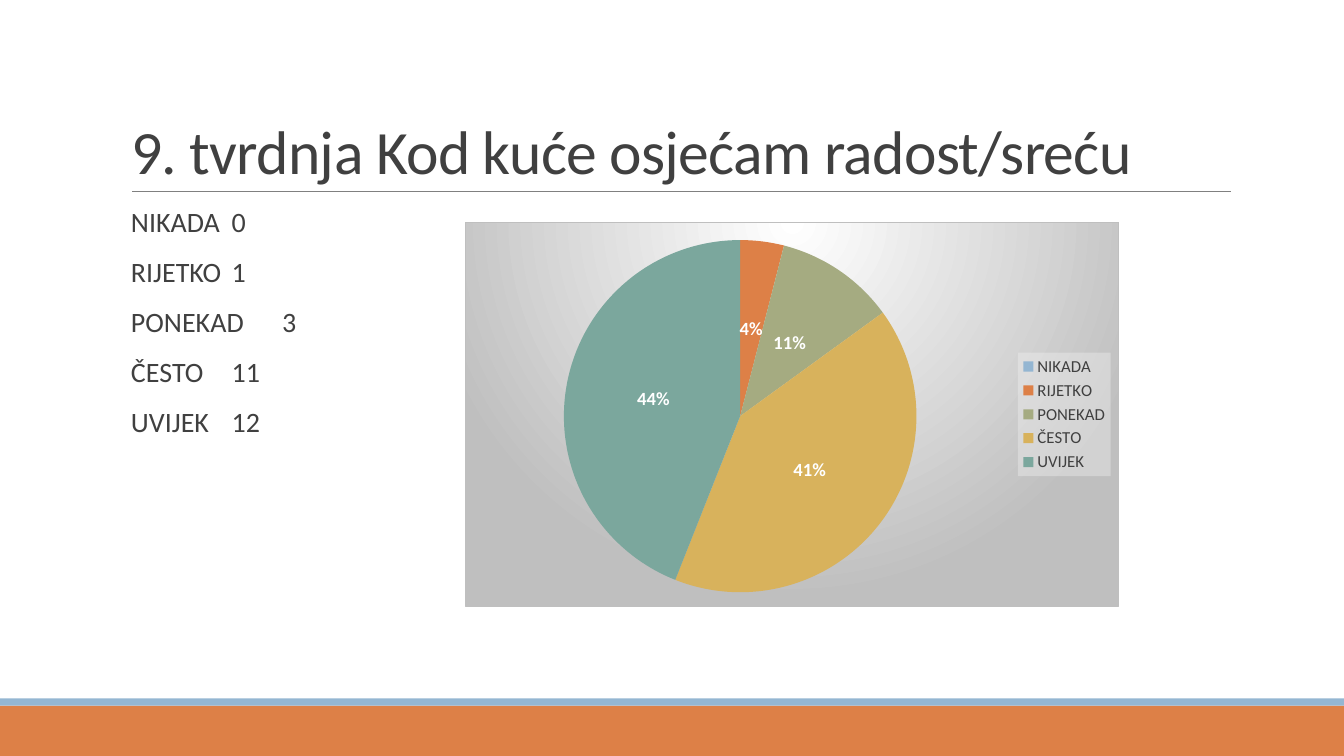
from lxml.etree import SubElement
from pptx import Presentation
from pptx.chart.data import CategoryChartData
from pptx.dml.color import RGBColor
from pptx.enum.chart import XL_CHART_TYPE, XL_LABEL_POSITION, XL_LEGEND_POSITION
from pptx.enum.shapes import MSO_CONNECTOR, MSO_SHAPE
from pptx.enum.text import MSO_ANCHOR, MSO_AUTO_SIZE, PP_ALIGN
from pptx.oxml import parse_xml
from pptx.oxml.ns import nsdecls, qn
from pptx.util import Cm, Pt

BLUE = RGBColor(0x94, 0xB6, 0xD2)
ORANGE = RGBColor(0xDD, 0x80, 0x47)
OLIVE = RGBColor(0xA5, 0xAB, 0x81)
GOLD = RGBColor(0xD8, 0xB2, 0x5C)
TEAL = RGBColor(0x7B, 0xA7, 0x9D)
DARK = RGBColor(0x40, 0x40, 0x40)
GRAY = RGBColor(0x80, 0x80, 0x80)
SILVER = RGBColor(0xBF, 0xBF, 0xBF)
PALE = RGBColor(0xF2, 0xF2, 0xF2)
WHITE = RGBColor(0xFF, 0xFF, 0xFF)

FONT = "Calibri"
WIDTH, HEIGHT = Cm(33.87), Cm(19.05)
ANSWERS = [
    ("NIKADA", 0, 0, BLUE),
    ("RIJETKO", 1, 4, ORANGE),
    ("PONEKAD", 3, 11, OLIVE),
    ("ČESTO", 11, 41, GOLD),
    ("UVIJEK", 12, 44, TEAL),
]


def style_font(font, size, color, bold=False):
    font.name = FONT
    font.size = Pt(size)
    font.bold = bold
    font.color.rgb = color


def place(box, left, top, width, height, anchor):
    box.left, box.top = Cm(left), Cm(top)
    box.width, box.height = Cm(width), Cm(height)
    frame = box.text_frame
    frame.auto_size = MSO_AUTO_SIZE.NONE
    frame.word_wrap = True
    frame.vertical_anchor = anchor
    return frame


def add_band(page, top, height, color):
    band = page.shapes.add_shape(MSO_SHAPE.RECTANGLE, 0, Cm(top), WIDTH, Cm(height))
    band.shadow.inherit = False
    band.fill.solid()
    band.fill.fore_color.rgb = color
    band.line.fill.background()


def add_rule(page, left, right, top):
    rule = page.shapes.add_connector(
        MSO_CONNECTOR.STRAIGHT, Cm(left), Cm(top), Cm(right), Cm(top))
    rule.line.color.rgb = GRAY
    rule.line.width = Pt(0.5)
    SubElement(rule._element.spPr, qn("a:effectLst"))


def fill_title(box, text):
    frame = place(box, 3.05, 0.79, 27.94, 4.04, MSO_ANCHOR.BOTTOM)
    para = frame.paragraphs[0]
    para.alignment = PP_ALIGN.LEFT
    para.line_spacing = 0.85
    span = para.add_run()
    span.text = text
    style_font(span.font, 44, DARK)
    span._r.get_or_add_rPr().set("spc", "-50")


def set_tab_layout(para, position):
    properties = para._p.get_or_add_pPr()
    properties.set("marL", "0")
    properties.set("indent", "0")
    SubElement(properties, qn("a:buNone"))
    tabs = SubElement(properties, qn("a:tabLst"))
    SubElement(tabs, qn("a:tab"), pos=str(position), algn="r")


def fill_answers(box):
    frame = place(box, 3.05, 5.13, 27.94, 11.18, MSO_ANCHOR.TOP)
    frame.margin_left = Cm(0.25)
    for index, (answer, count, share, color) in enumerate(ANSWERS):
        para = frame.add_paragraph() if index else frame.paragraphs[0]
        para.line_spacing = 0.9
        para.space_before = Pt(12)
        para.space_after = Pt(2)
        set_tab_layout(para, Cm(4))
        span = para.add_run()
        span.text = f"{answer}\t{count}"
        style_font(span.font, 20, DARK)


def shade_chart(chart):
    chart._chartSpace.find(qn("c:chart")).addnext(parse_xml(
        f'<c:spPr {nsdecls("c", "a")}><a:gradFill><a:gsLst>'
        f'<a:gs pos="0"><a:srgbClr val="{WHITE}"/></a:gs>'
        f'<a:gs pos="100000"><a:srgbClr val="{SILVER}"/></a:gs></a:gsLst>'
        '<a:path path="circle"><a:fillToRect l="50000" r="50000" b="100000"/></a:path>'
        f'</a:gradFill><a:ln w="9525"><a:solidFill><a:srgbClr val="{SILVER}"/>'
        '</a:solidFill></a:ln></c:spPr>'))


def position_pie(chart):
    plot_area = chart._chartSpace.find(qn("c:chart")).find(qn("c:plotArea"))
    for layout in plot_area.findall(qn("c:layout")):
        plot_area.remove(layout)
    layout = parse_xml(
        f'<c:layout {nsdecls("c")}><c:manualLayout><c:layoutTarget val="inner"/>'
        '<c:xMode val="edge"/><c:yMode val="edge"/><c:x val="0.15"/><c:y val="0.04"/>'
        '<c:w val="0.54"/><c:h val="0.93"/></c:manualLayout></c:layout>')
    plot_area.insert(0, layout)


def add_legend(chart):
    chart.has_legend = True
    legend = chart.legend
    legend.position = XL_LEGEND_POSITION.RIGHT
    legend.include_in_layout = False
    style_font(legend.font, 12, DARK)
    legend._element.find(qn("c:overlay")).addnext(parse_xml(
        f'<c:spPr {nsdecls("c", "a")}><a:solidFill><a:srgbClr val="{PALE}">'
        '<a:alpha val="39000"/></a:srgbClr></a:solidFill></c:spPr>'))


def add_pie(page):
    data = CategoryChartData()
    data.categories = [answer for answer, *_ in ANSWERS]
    data.add_series("Series 1", [share for _, _, share, _ in ANSWERS])
    chart = page.shapes.add_chart(
        XL_CHART_TYPE.PIE, Cm(11.73), Cm(5.59), Cm(16.48), Cm(9.7), data).chart
    chart.has_title = False
    chart.font.name = FONT
    chart.font.size = Pt(10)
    plot = chart.plots[0]
    plot.vary_by_categories = True
    for index, (*_, color) in enumerate(ANSWERS):
        fill = plot.series[0].points[index].format.fill
        fill.solid()
        fill.fore_color.rgb = color
    labels = plot.series[0].data_labels
    labels.show_percentage = True
    labels.show_value = False
    labels.number_format = "0%"
    labels.number_format_is_linked = False
    labels.position = XL_LABEL_POSITION.CENTER
    style_font(labels.font, 13.3, WHITE, bold=True)
    add_legend(chart)
    position_pie(chart)
    shade_chart(chart)


def main():
    deck = Presentation()
    deck.slide_width, deck.slide_height = WIDTH, HEIGHT
    page = deck.slides.add_slide(deck.slide_layouts[1])
    add_band(page, 17.78, 1.27, ORANGE)
    add_band(page, 17.6, 0.18, BLUE)
    add_rule(page, 3.33, 31.01, 4.83)
    fill_title(page.shapes.title, "9. tvrdnja Kod kuće osjećam radost/sreću")
    fill_answers(page.placeholders[1])
    add_pie(page)
    deck.save("out.pptx")


if __name__ == "__main__":
    main()
